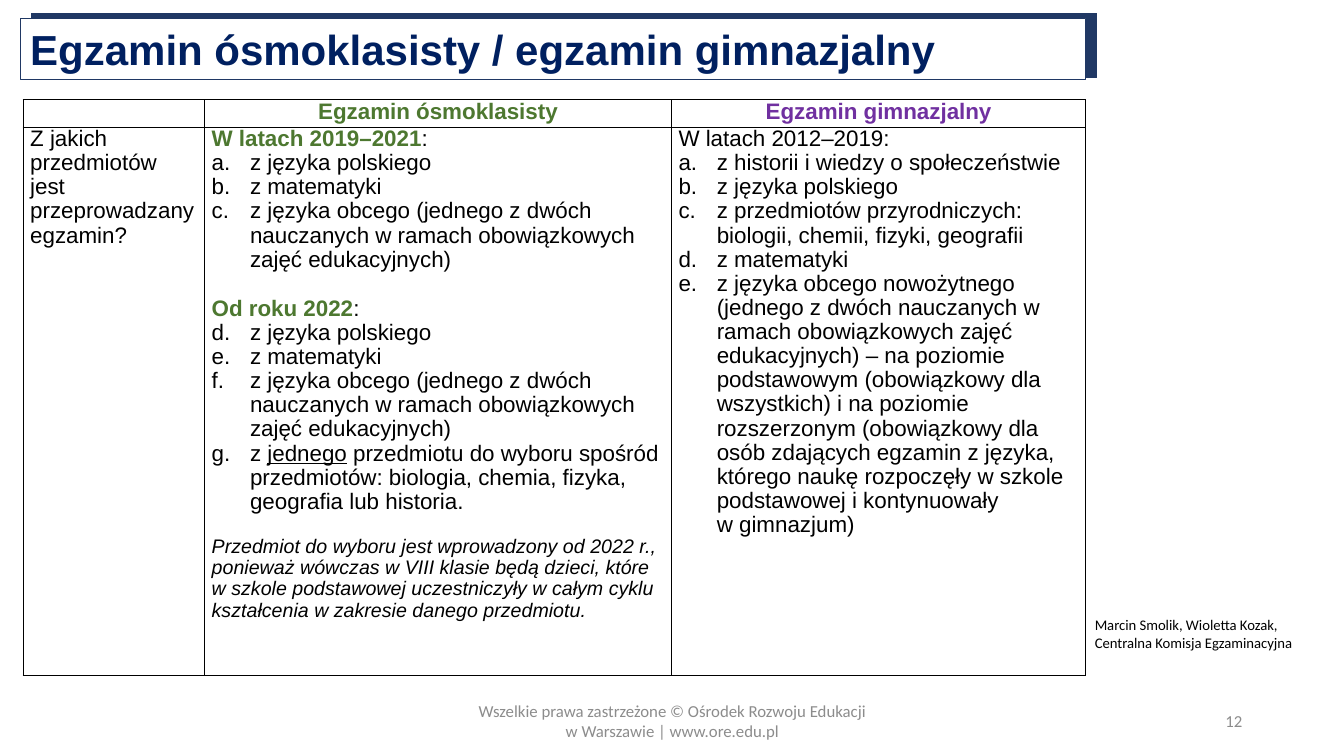
from dataclasses import dataclass

from lxml.etree import SubElement
from pptx import Presentation
from pptx.dml.color import RGBColor as Color
from pptx.enum.shapes import MSO_SHAPE as Shape
from pptx.enum.text import MSO_ANCHOR as Anchor, MSO_AUTO_SIZE as AutoSize, PP_ALIGN as Align
from pptx.oxml.ns import qn
from pptx.util import Inches, Pt


@dataclass(frozen=True)
class Theme:
    """Colours, fonts and type sizes of the slide."""
    navy: str = "203864"
    title: str = "002060"
    green: str = "4D7830"
    purple: str = "7030A0"
    black: str = "000000"
    white: str = "FFFFFF"
    grey: str = "8C8C8C"
    head_font: str = "Arial"
    small_font: str = "Calibri"
    title_size: float = 30
    body_size: float = 16
    note_size: float = 14
    footer_size: float = 12
    credit_size: float = 10.5
    line_spacing: float = 0.97


THEME = Theme()
COLUMNS = (1.8, 4.63, 4.11)
ROWS = (0.26, 5.44)
SUBJECTS = (
    "z języka polskiego",
    "z matematyki",
    "z języka obcego (jednego z dwóch nauczanych w ramach obowiązkowych zajęć edukacyjnych)",
)
CHOICE = (
    ("z ", {}),
    ("jednego", {"underline": True}),
    (" przedmiotu do wyboru spośród przedmiotów: biologia, chemia, fizyka, geografia lub historia.", {}),
)
NOTES = (
    "Przedmiot do wyboru jest wprowadzony od 2022 r., ponieważ wówczas w VIII klasie będą dzieci, które",
    "w szkole podstawowej uczestniczyły w całym cyklu kształcenia w zakresie danego przedmiotu.",
)
OLD_SUBJECTS = (
    "z historii i wiedzy o społeczeństwie",
    "z języka polskiego",
    "z przedmiotów przyrodniczych: biologii, chemii, fizyki, geografii",
    "z matematyki",
    "z języka obcego nowożytnego (jednego z dwóch nauczanych w ramach obowiązkowych zajęć "
    "edukacyjnych) – na poziomie podstawowym (obowiązkowy dla wszystkich) i na poziomie "
    "rozszerzonym (obowiązkowy dla osób zdających egzamin z języka, którego naukę rozpoczęły "
    "w szkole podstawowej i kontynuowały \vw gimnazjum)",
)


def style_span(span, size, color=THEME.black, font=THEME.head_font, **flags):
    """Format one run; flags are bold, italic or underline."""
    span.font.size = Pt(size)
    span.font.name = font
    span.font.color.rgb = Color.from_string(color)
    for flag, value in flags.items():
        setattr(span.font, flag, value)


def write_para(para, text, size, align=Align.LEFT, **style):
    """Fill a paragraph with text in a single style."""
    para.text = text
    para.alignment = align
    for span in para.runs:
        style_span(span, size, **style)


def write_box(page, box, lines, size, align, color, anchor=Anchor.MIDDLE):
    """Place a wrapping text box with one paragraph per line."""
    frame = page.shapes.add_textbox(*map(Inches, box)).text_frame
    frame.word_wrap = True
    frame.vertical_anchor = anchor
    frame.text = "\n".join(lines)
    for para in frame.paragraphs:
        write_para(para, para.text, size, align, color=color, font=THEME.small_font)


def outline(shape, fill):
    """Give a shape its fill and the thin navy line."""
    shape.fill.solid()
    shape.fill.fore_color.rgb = Color.from_string(fill)
    shape.line.color.rgb = Color.from_string(THEME.navy)
    shape.line.width = Pt(0.75)


def add_title(page, box):
    """Place the title panel over an offset navy panel."""
    left, top, width, height = box
    panel = page.shapes.add_shape(
        Shape.RECTANGLE, *map(Inches, (left + 0.11, top - 0.05, width, height + 0.03)))
    panel.shadow.inherit = False
    outline(panel, THEME.navy)
    title = page.shapes.title
    title.left, title.top, title.width, title.height = map(Inches, box)
    outline(title, THEME.white)
    panel.element.addnext(title.element)
    frame = title.text_frame
    frame.auto_size = AutoSize.NONE
    frame.vertical_anchor = Anchor.MIDDLE
    write_para(frame.paragraphs[0], "Egzamin ósmoklasisty / egzamin gimnazjalny",
               THEME.title_size, color=THEME.title, bold=True)


def set_borders(cell, hidden=()):
    """Draw black cell borders except on the hidden sides."""
    properties = cell._tc.get_or_add_tcPr()
    for side in ("L", "R", "T", "B"):
        line = SubElement(properties, qn(f"a:ln{side}"), w=str(Pt(1)))
        if side in hidden:
            SubElement(line, qn("a:noFill"))
        else:
            fill = SubElement(line, qn("a:solidFill"))
            SubElement(fill, qn("a:srgbClr"), val=THEME.black)


def next_para(cell, gap=0):
    """Return the empty first paragraph of a cell or a new one."""
    frame = cell.text_frame
    para = frame.paragraphs[0] if not frame.text else frame.add_paragraph()
    para.line_spacing = THEME.line_spacing
    if gap:
        para.space_before = Pt(gap)
    return para


def add_period(cell, period, items, start=1, gap=0, **style):
    """Write a period heading followed by its lettered subjects."""
    para = next_para(cell, gap)
    for text, flags in ((period, style), (":", {})):
        span = para.add_run()
        span.text = text
        style_span(span, THEME.body_size, **flags)
    for item in items:
        para = next_para(cell)
        properties = para._p.get_or_add_pPr()
        properties.set("marL", str(Inches(0.38)))
        properties.set("indent", str(-Inches(0.38)))
        SubElement(properties, qn("a:buFont"), typeface="+mj-lt")
        SubElement(properties, qn("a:buAutoNum"), type="alphaLcPeriod", startAt=str(start))
        if isinstance(item, str):
            write_para(para, item, THEME.body_size)
            continue
        for text, flags in item:
            span = para.add_run()
            span.text = text
            style_span(span, THEME.body_size, **flags)


def add_comparison(page, box):
    """Place the table that compares both exams."""
    table = page.shapes.add_table(len(ROWS), len(COLUMNS), *map(Inches, box)).table
    table.first_row = table.horz_banding = False
    for column, width in zip(table.columns, COLUMNS):
        column.width = Inches(width)
    for row, height in zip(table.rows, ROWS):
        row.height = Inches(height)
    corner, new_head, old_head, question, new_exam, old_exam = table.iter_cells()
    for cell in table.iter_cells():
        cell.margin_left = cell.margin_right = Inches(0.07)
        cell.margin_top = cell.margin_bottom = 0
        set_borders(cell, "LT" if cell is corner else "")
        cell.fill.background()
    SubElement(next_para(corner)._p, qn("a:endParaRPr"), sz=str(THEME.body_size * 100))
    for cell, text, color in ((new_head, "Egzamin ósmoklasisty", THEME.green),
                              (old_head, "Egzamin gimnazjalny", THEME.purple)):
        write_para(next_para(cell), text, THEME.body_size, Align.CENTER, color=color, bold=True)
    write_para(next_para(question), "Z jakich przedmiotów jest przeprowadzany egzamin?",
               THEME.body_size)
    add_period(new_exam, "W latach 2019–2021", SUBJECTS, color=THEME.green, bold=True)
    add_period(new_exam, "Od roku 2022", (*SUBJECTS, CHOICE), start=len(SUBJECTS) + 1,
               gap=17.8, color=THEME.green, bold=True)
    for note, gap in zip(NOTES, (15.7, 0)):
        write_para(next_para(new_exam, gap), note, THEME.note_size, italic=True)
    add_period(old_exam, "W latach 2012–2019", OLD_SUBJECTS)


def add_footer(page, top, height):
    """Place the copyright line and the slide number."""
    write_box(page, (4.42, top, 4.5, height),
              ("Wszelkie prawa zastrzeżone © Ośrodek Rozwoju Edukacji", "w Warszawie | www.ore.edu.pl"),
              THEME.footer_size, Align.CENTER, THEME.grey)
    write_box(page, (9.42, top, 3, height), ("12",), THEME.footer_size, Align.RIGHT, THEME.grey)


def main():
    """Build the slide and save the deck."""
    deck = Presentation()
    deck.slide_width, deck.slide_height = Inches(13.33), Inches(7.5)
    page = deck.slides.add_slide(deck.slide_layouts[5])
    add_footer(page, 6.95, 0.4)
    add_title(page, (0.2, 0.18, 10.57, 0.61))
    add_comparison(page, (0.23, 0.99, sum(COLUMNS), sum(ROWS)))
    write_box(page, (10.76, 6.06, 2.25, 0.45),
              ("Marcin Smolik, Wioletta Kozak, Centralna Komisja Egzaminacyjna",),
              THEME.credit_size, Align.LEFT, THEME.black, Anchor.TOP)
    deck.save("out.pptx")


if __name__ == "__main__":
    main()
